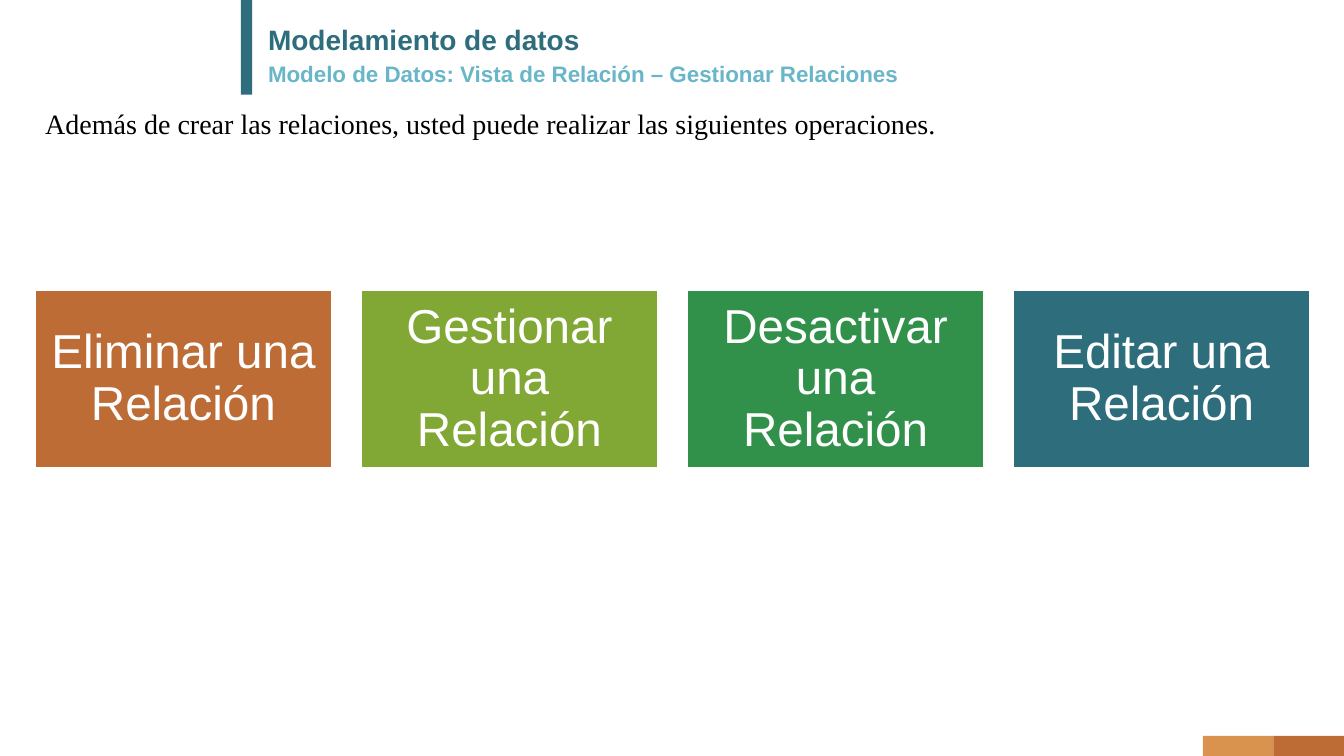
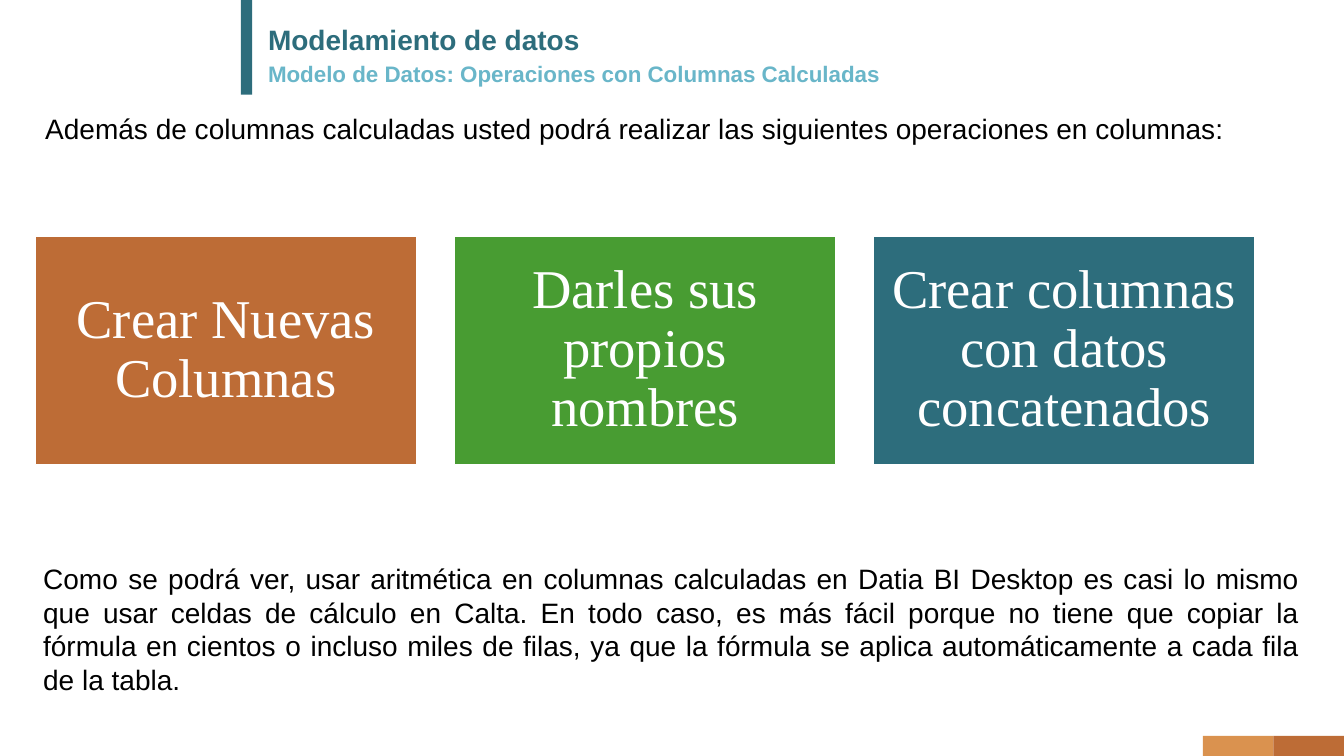
from pptx import Presentation
from pptx.dml.color import RGBColor
from pptx.enum.shapes import MSO_SHAPE
from pptx.enum.text import MSO_ANCHOR, PP_ALIGN
from pptx.util import Inches, Pt

TEAL, SKY, RUST, AMBER = "2D6D7C", "69B6C9", "BD6C36", "DA924F"
LIME, GREEN, LEAF = "81A734", "31914A", "489C32"
WHITE, BLACK = "FFFFFF", "000000"
SANS, SERIF = "Arial", "Times New Roman"
LEFT, CONTENT_WIDTH = 0.35, 12.66

TITLE = {"name": SANS, "size": Pt(20), "bold": True, "color": TEAL}
SUBTITLE = {"name": SANS, "size": Pt(16), "bold": True, "color": SKY}
BODY = {"name": SANS, "size": Pt(20), "color": BLACK}
SERIF_BODY = {**BODY, "name": SERIF}


def rgb(color):
    """Turn a hex string into a colour."""
    return RGBColor.from_string(color)


def set_text(frame, text, style, align=PP_ALIGN.LEFT, spacing=1.0):
    """Write one styled paragraph into a text frame."""
    frame.word_wrap = True
    paragraph = frame.paragraphs[0]
    paragraph.alignment = align
    paragraph.line_spacing = spacing
    run = paragraph.add_run()
    run.text = text
    for attribute, value in style.items():
        if attribute == "color":
            run.font.color.rgb = rgb(value)
        else:
            setattr(run.font, attribute, value)


def add_text(slide, box, text, style, **layout):
    """Add a text box at the given inches."""
    frame = slide.shapes.add_textbox(*map(Inches, box)).text_frame
    set_text(frame, text, style, **layout)


def add_block(slide, box, color, outline=None):
    """Add a flat rectangle, outlined on request."""
    block = slide.shapes.add_shape(MSO_SHAPE.RECTANGLE, *map(Inches, box))
    block.shadow.inherit = False
    block.fill.solid()
    block.fill.fore_color.rgb = rgb(color)
    if outline:
        block.line.color.rgb = rgb(outline)
        block.line.width = Pt(1)
    else:
        block.line.fill.background()
    return block


def add_operations(slide, top, width, inset, font, size, operations):
    """Lay out a row of operation cards with gaps of a tenth of their width."""
    style = {"name": font, "size": Pt(size), "color": WHITE}
    for index, (label, color) in enumerate(operations):
        box = (LEFT + index * width * 1.1, top, width, width * 0.6)
        frame = add_block(slide, box, color, WHITE).text_frame
        frame.vertical_anchor = MSO_ANCHOR.MIDDLE
        for side in ("left", "top", "right", "bottom"):
            setattr(frame, f"margin_{side}", Inches(inset))
        set_text(frame, label, style, PP_ALIGN.CENTER, 0.9)


def add_topic_slide(deck, subtitle):
    """Add a slide with the shared bands and headings."""
    slide = deck.slides.add_slide(deck.slide_layouts[6])
    add_block(slide, (2.39, 0, 0.11, 0.94), TEAL)
    for left, color in ((11.93, AMBER), (12.63, RUST)):
        add_block(slide, (left, 7.3, 0.7, 0.2), color)
    headings = ((0.21, "Modelamiento de datos", TITLE), (0.58, subtitle, SUBTITLE))
    for top, text, style in headings:
        add_text(slide, (2.56, top, 10.45, 0.4), text, style, spacing=0.9)
    return slide


def add_relations_slide(deck):
    """Build the slide on managing relations."""
    slide = add_topic_slide(
        deck, "Modelo de Datos: Vista de Relación – Gestionar Relaciones")
    add_text(
        slide, (LEFT, 1.06, CONTENT_WIDTH, 0.38),
        "Además de crear las relaciones, usted puede realizar las siguientes operaciones.",
        SERIF_BODY, align=PP_ALIGN.JUSTIFY, spacing=Pt(20.2))
    add_operations(slide, 2.88, 2.94, 0.14, SANS, 34, (
        ("Eliminar una Relación", RUST),
        ("Gestionar una Relación", LIME),
        ("Desactivar una Relación", GREEN),
        ("Editar una Relación", TEAL),
    ))


def add_columns_slide(deck):
    """Build the slide on calculated columns."""
    slide = add_topic_slide(
        deck, "Modelo de Datos: Operaciones con Columnas Calculadas")
    add_text(
        slide, (LEFT, 1.06, CONTENT_WIDTH, 0.44),
        "Además de columnas calculadas usted podrá realizar las siguientes "
        "operaciones en columnas:",
        BODY, align=PP_ALIGN.JUSTIFY)
    add_operations(slide, 2.34, 3.78, 0.16, SERIF, 39, (
        ("Crear Nuevas Columnas", RUST),
        ("Darles sus propios nombres", LEAF),
        ("Crear columnas con datos concatenados", TEAL),
    ))
    add_text(
        slide, (0.33, 5.52, CONTENT_WIDTH, 1.45),
        "Como se podrá ver, usar aritmética en columnas calculadas en Datia BI "
        "Desktop es casi lo mismo que usar celdas de cálculo en Calta. En todo "
        "caso, es más fácil porque no tiene que copiar la fórmula en cientos o "
        "incluso miles de filas, ya que la fórmula se aplica automáticamente a "
        "cada fila de la tabla.",
        BODY, align=PP_ALIGN.JUSTIFY)


def main():
    """Build and save the deck."""
    deck = Presentation()
    deck.slide_width, deck.slide_height = Inches(13.33), Inches(7.5)
    add_relations_slide(deck)
    add_columns_slide(deck)
    deck.save("out.pptx")


if __name__ == "__main__":
    main()
